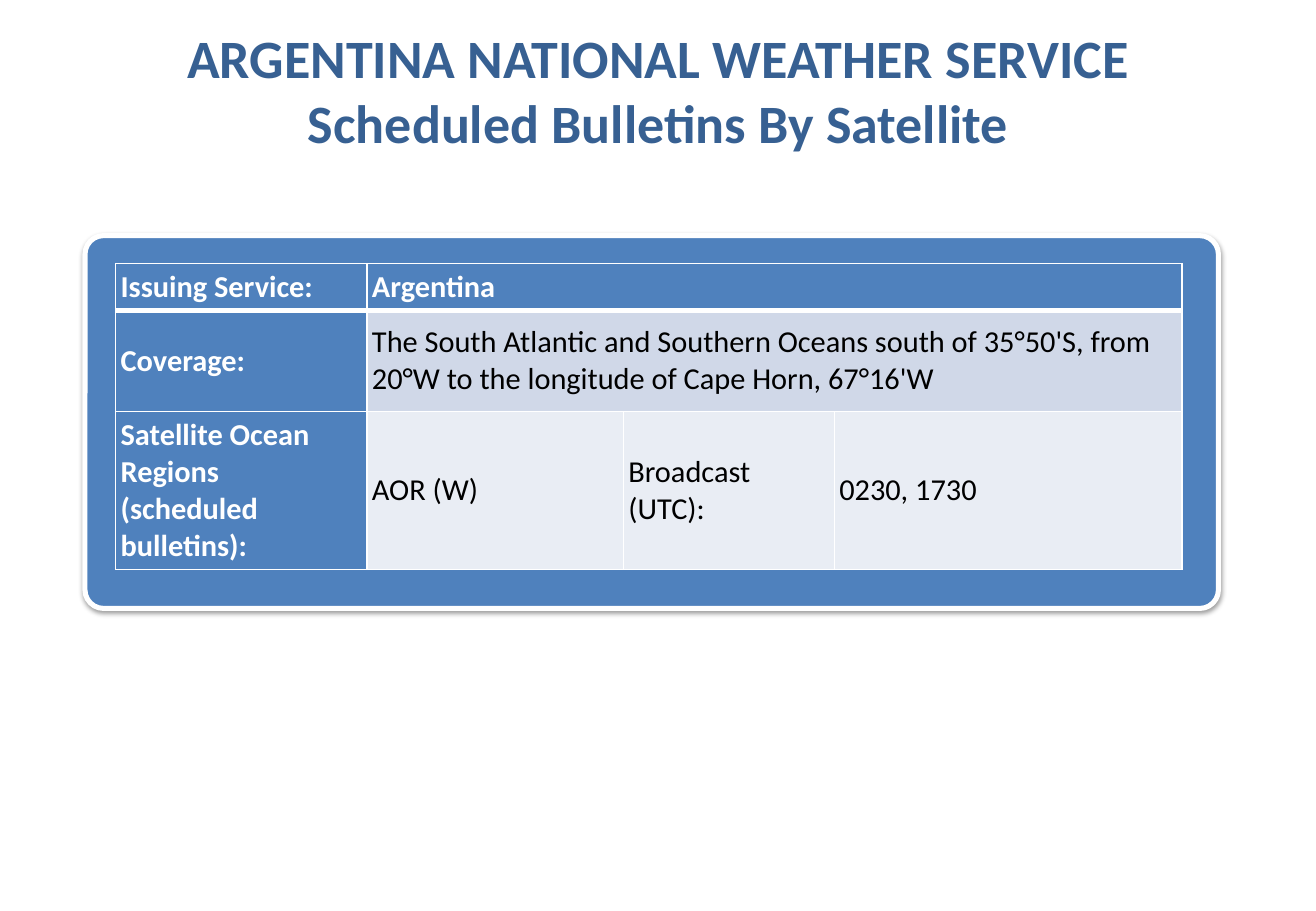
"""Build the slide of scheduled weather bulletins."""
from dataclasses import dataclass

from lxml.etree import SubElement
from pptx import Presentation
from pptx.dml.color import RGBColor
from pptx.enum.shapes import MSO_SHAPE as Shape
from pptx.enum.text import MSO_ANCHOR as Anchor, MSO_AUTO_SIZE as AutoSize, PP_ALIGN as Align
from pptx.oxml import parse_xml
from pptx.oxml.ns import nsdecls, qn
from pptx.util import Pt

BLUE, WHITE, BLACK = "4F81BD", "FFFFFF", "000000"
TITLE_BLUE, BAND, PALE = "376092", "D0D8E8", "E9EDF4"
COLUMNS = (149, 152, 125, 206)
ROWS = (27.5, 60, 93.5)


@dataclass
class Entry:
    row: int
    col: int
    text: str
    fill: str = BLUE
    span: int = 1


ENTRIES = (
    Entry(0, 0, "Issuing Service:"),
    Entry(0, 1, "Argentina", span=3),
    Entry(1, 0, "Coverage:"),
    Entry(1, 1, "The South Atlantic and Southern Oceans south of 35°50'S, "
                "from 20°W to the longitude of Cape Horn, 67°16'W", BAND, 3),
    Entry(2, 0, "Satellite Ocean Regions (scheduled bulletins):"),
    Entry(2, 1, "AOR (W)", PALE),
    Entry(2, 2, "Broadcast (UTC):", PALE),
    Entry(2, 3, "0230, 1730", PALE),
)


def rgb(value: str) -> RGBColor:
    return RGBColor.from_string(value)


def write(tf, text: str, *, size: float, color: str, bold: bool = False,
          align=Align.LEFT, anchor=Anchor.MIDDLE) -> None:
    tf.text = text
    tf.word_wrap = True
    tf.vertical_anchor = anchor
    for p in tf.paragraphs:
        p.alignment = align
        for r in p.runs:
            r.font.name, r.font.size, r.font.bold = "Calibri", Pt(size), bold
            r.font.color.rgb = rgb(color)


def add_title(s) -> None:
    sp = s.shapes.title
    sp.left, sp.top, sp.width, sp.height = Pt(18), Pt(10.8), Pt(744.5), Pt(80.6)
    write(sp.text_frame, "ARGENTINA NATIONAL WEATHER SERVICE\nScheduled Bulletins By Satellite",
          size=32, color=TITLE_BLUE, bold=True, align=Align.CENTER, anchor=Anchor.TOP)
    sp.text_frame.auto_size = AutoSize.NONE


def add_panel(s) -> None:
    sp = s.shapes.add_shape(Shape.ROUNDED_RECTANGLE, Pt(50.4), Pt(139.7), Pt(671.8), Pt(221))
    sp.adjustments[0] = 0.05
    sp.fill.solid()
    sp.fill.fore_color.rgb = rgb(BLUE)
    sp.line.color.rgb = rgb(WHITE)
    sp.line.width = Pt(3)
    sp.shadow.inherit = False
    effects = sp._element.spPr.find(qn("a:effectLst"))
    shadow = SubElement(effects, qn("a:outerShdw"), blurRad=str(Pt(3.1)),
                        dist=str(Pt(1.6)), dir="5400000", rotWithShape="0")
    color = SubElement(shadow, qn("a:srgbClr"), val=BLACK)
    SubElement(color, qn("a:alpha"), val="38000")


def set_borders(cell, **widths: float) -> None:
    tc_pr = cell._tc.get_or_add_tcPr()
    for i, side in enumerate("LRTB"):
        tc_pr.insert(i, parse_xml(
            f'<a:ln{side} {nsdecls("a")} w="{Pt(widths.get(side, 1))}"><a:solidFill>'
            f'<a:srgbClr val="{WHITE}"/></a:solidFill></a:ln{side}>'))


def add_schedule(s) -> None:
    frame = s.shapes.add_table(len(ROWS), len(COLUMNS), Pt(68.6), Pt(156.2),
                               Pt(sum(COLUMNS)), Pt(sum(ROWS)))
    table = frame.table
    table.first_row = table.horz_banding = False
    for column, width in zip(table.columns, COLUMNS):
        column.width = Pt(width)
    for i, (row, height) in enumerate(zip(table.rows, ROWS)):
        row.height = Pt(height)
        for cell in row.cells:
            set_borders(cell, T=3 if i == 1 else 1, B=3 if i == 0 else 1)
    for entry in ENTRIES:
        cell = table.cell(entry.row, entry.col)
        if entry.span > 1:
            cell.merge(table.cell(entry.row, entry.col + entry.span - 1))
        cell.fill.solid()
        cell.fill.fore_color.rgb = rgb(entry.fill)
        cell.margin_left = cell.margin_right = cell.margin_top = cell.margin_bottom = Pt(2.9)
        heading = entry.fill == BLUE
        write(cell.text_frame, entry.text, size=18, bold=heading,
              color=WHITE if heading else BLACK)
        cell.vertical_anchor = Anchor.MIDDLE


def main() -> None:
    prs = Presentation()
    prs.slide_width, prs.slide_height = Pt(780), Pt(540)
    s = prs.slides.add_slide(prs.slide_layouts[0])
    subtitle = s.placeholders[1]._element
    subtitle.getparent().remove(subtitle)
    add_title(s)
    add_panel(s)
    add_schedule(s)
    prs.save("out.pptx")


if __name__ == "__main__":
    main()
